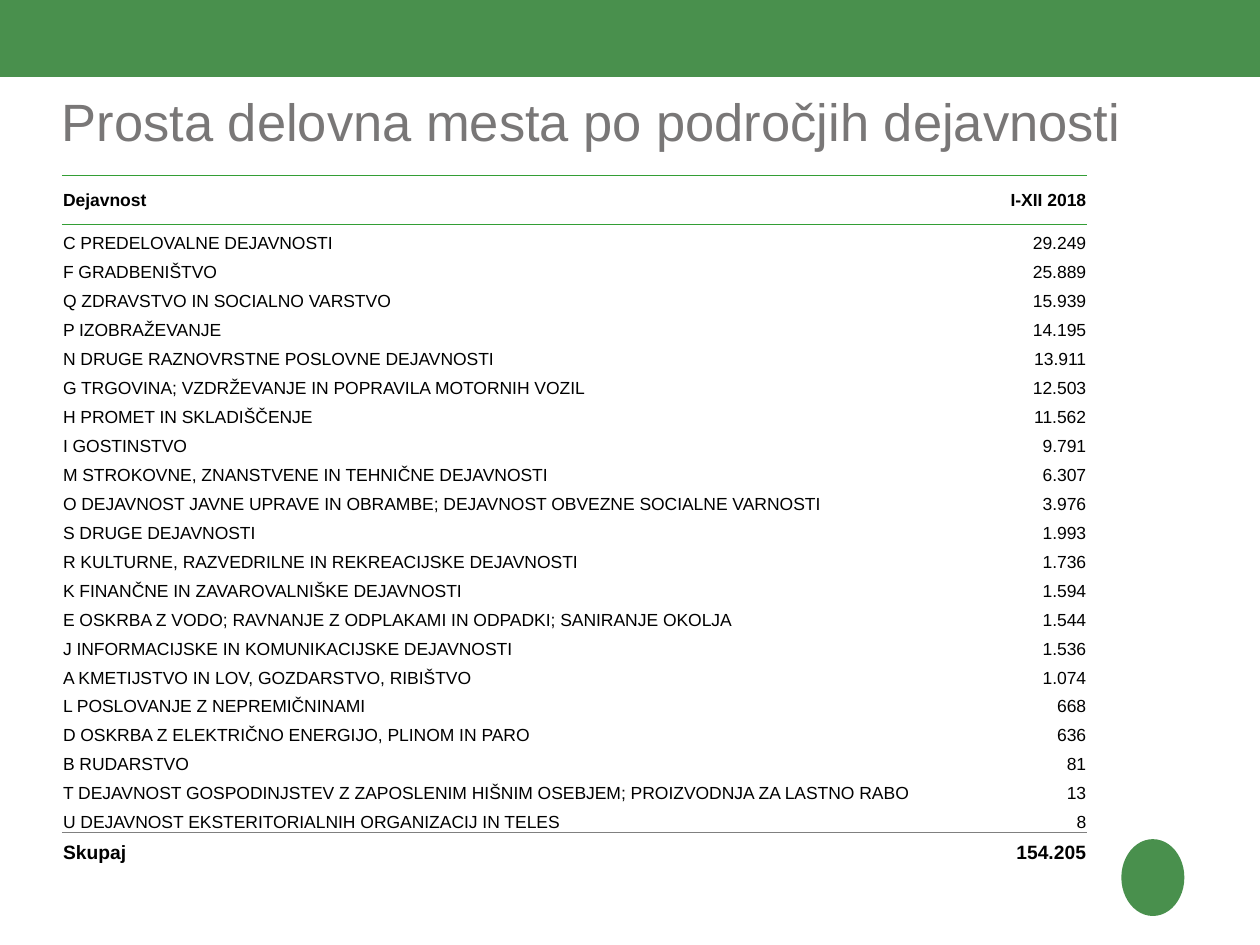
from dataclasses import dataclass
from typing import Any

from lxml import etree
from pptx import Presentation
from pptx import util as u
from pptx.dml.color import RGBColor
from pptx.enum import shapes, text
from pptx.oxml import ns

COLORS = {"green": "49904D", "title": "797777", "ink": "000000",
          "header_rule": "339E35", "total_rule": "808080"}

HEADER = ("Dejavnost", "I-XII 2018")
ACTIVITIES = [
    ("C PREDELOVALNE DEJAVNOSTI", "29.249"),
    ("F GRADBENIŠTVO", "25.889"),
    ("Q ZDRAVSTVO IN SOCIALNO VARSTVO", "15.939"),
    ("P IZOBRAŽEVANJE", "14.195"),
    ("N DRUGE RAZNOVRSTNE POSLOVNE DEJAVNOSTI", "13.911"),
    ("G TRGOVINA; VZDRŽEVANJE IN POPRAVILA MOTORNIH VOZIL", "12.503"),
    ("H PROMET IN SKLADIŠČENJE", "11.562"),
    ("I GOSTINSTVO", "9.791"),
    ("M STROKOVNE, ZNANSTVENE IN TEHNIČNE DEJAVNOSTI", "6.307"),
    ("O DEJAVNOST JAVNE UPRAVE IN OBRAMBE; DEJAVNOST OBVEZNE SOCIALNE VARNOSTI", "3.976"),
    ("S DRUGE DEJAVNOSTI", "1.993"),
    ("R KULTURNE, RAZVEDRILNE IN REKREACIJSKE DEJAVNOSTI", "1.736"),
    ("K FINANČNE IN ZAVAROVALNIŠKE DEJAVNOSTI", "1.594"),
    ("E OSKRBA Z VODO; RAVNANJE Z ODPLAKAMI IN ODPADKI; SANIRANJE OKOLJA", "1.544"),
    ("J INFORMACIJSKE IN KOMUNIKACIJSKE DEJAVNOSTI", "1.536"),
    ("A KMETIJSTVO IN LOV, GOZDARSTVO, RIBIŠTVO", "1.074"),
    ("L POSLOVANJE Z NEPREMIČNINAMI", "668"),
    ("D OSKRBA Z ELEKTRIČNO ENERGIJO, PLINOM IN PARO", "636"),
    ("B RUDARSTVO", "81"),
    ("T DEJAVNOST GOSPODINJSTEV Z ZAPOSLENIM HIŠNIM OSEBJEM; PROIZVODNJA ZA LASTNO RABO", "13"),
    ("U DEJAVNOST EKSTERITORIALNIH ORGANIZACIJ IN TELES", "8"),
]
TOTAL = ("Skupaj", "154.205")


@dataclass
class SlideKit:
    """Style and current slide; lengths are units of a 100 x 75 grid."""
    slide: Any
    font: str = "Arial"
    unit: int = u.Inches(0.1)

    def grid(self, *lengths):
        return [round(length * self.unit) for length in lengths]

    def label(self, frame, words, size, color, bold=False, align=text.PP_ALIGN.LEFT):
        line = frame.paragraphs[0]
        line.text = words
        line.alignment = align
        line.font.name, line.font.size, line.font.bold = self.font, u.Pt(size), bold
        line.font.color.rgb = RGBColor.from_string(COLORS[color])

    def block(self, preset, *place):
        block = self.slide.shapes.add_shape(preset, *self.grid(*place))
        block.shadow.inherit = False
        block.fill.solid()
        block.fill.fore_color.rgb = RGBColor.from_string(COLORS["green"])
        block.line.fill.background()

    def title(self, words, *place):
        frame = self.slide.shapes.add_textbox(*self.grid(*place)).text_frame
        frame.word_wrap = True
        frame.vertical_anchor = text.MSO_ANCHOR.MIDDLE
        frame.margin_left = frame.margin_right = frame.margin_top = frame.margin_bottom = 0
        self.label(frame, words, 30, "title")

    def borders(self, cell, rules):
        """Rule the named edges of a cell and clear the others."""
        props = cell._tc.get_or_add_tcPr()
        for position, edge in enumerate("LRTB"):
            line = etree.Element(ns.qn(f"a:ln{edge}"), w=str(u.Pt(0.5)))
            if edge in rules:
                fill = etree.SubElement(line, ns.qn("a:solidFill"))
                etree.SubElement(fill, ns.qn("a:srgbClr"), val=COLORS[rules[edge]])
            else:
                etree.SubElement(line, ns.qn("a:noFill"))
            props.insert(position, line)

    def table(self, rows, left, top, widths, heights, row_style):
        place = self.grid(left, top, sum(widths), sum(heights))
        table = self.slide.shapes.add_table(len(rows), len(widths), *place).table
        table.first_row = table.horz_banding = False
        for column, width in zip(table.columns, self.grid(*widths)):
            column.width = width
        for index, (values, height) in enumerate(zip(rows, self.grid(*heights))):
            table.rows[index].height = height
            size, bold, anchor, rules = row_style(index)
            for cell, words, align in zip(table.rows[index].cells, values,
                                          (text.PP_ALIGN.LEFT, text.PP_ALIGN.RIGHT)):
                cell.margin_left = cell.margin_right = cell.margin_top = u.Inches(0.01)
                cell.margin_bottom = 0
                cell.vertical_anchor = anchor
                cell.fill.background()
                self.borders(cell, rules)
                self.label(cell.text_frame, words, size, "ink", bold, align)


def activity_row_style(index):
    """Text size, weight, anchor and ruled edges of a table row."""
    last = len(ACTIVITIES)
    if index == 0:
        return 10, True, text.MSO_ANCHOR.MIDDLE, {"T": "header_rule", "B": "header_rule"}
    if index > last:
        return 11, True, text.MSO_ANCHOR.MIDDLE, {"T": "total_rule"}
    rules = {1: {"T": "header_rule"}, last: {"B": "total_rule"}}.get(index, {})
    return 10, False, text.MSO_ANCHOR.BOTTOM, rules


def main():
    deck = Presentation()
    deck.slide_width, deck.slide_height = u.Inches(10), u.Inches(7.5)
    kit = SlideKit(deck.slides.add_slide(deck.slide_layouts[6]))

    # Top band and plain corner emblem
    kit.block(shapes.MSO_SHAPE.RECTANGLE, 0, -0.1, 100, 6.2)
    kit.block(shapes.MSO_SHAPE.OVAL, 89, 66.6, 5, 6.1)

    # Title
    kit.title("Prosta delovna mesta po področjih dejavnosti", 4.9, 6.8, 92.6, 5.5)

    # Vacancies by activity
    kit.table([HEADER, *ACTIVITIES, TOTAL], 4.9, 13.9, [72.4, 9],
              [3.9] + [2.3] * len(ACTIVITIES) + [3.1], activity_row_style)

    deck.save("out.pptx")


if __name__ == "__main__":
    main()
